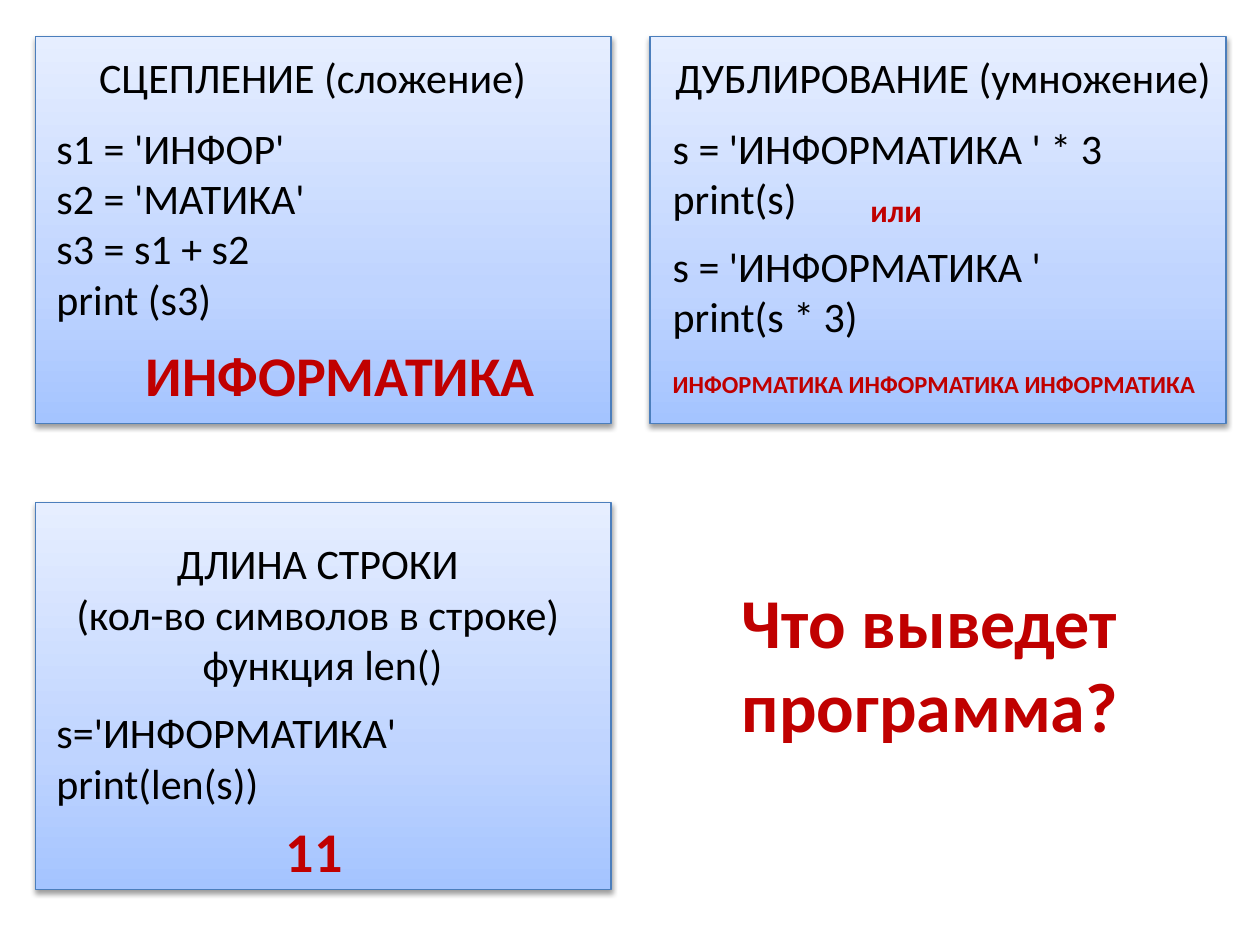
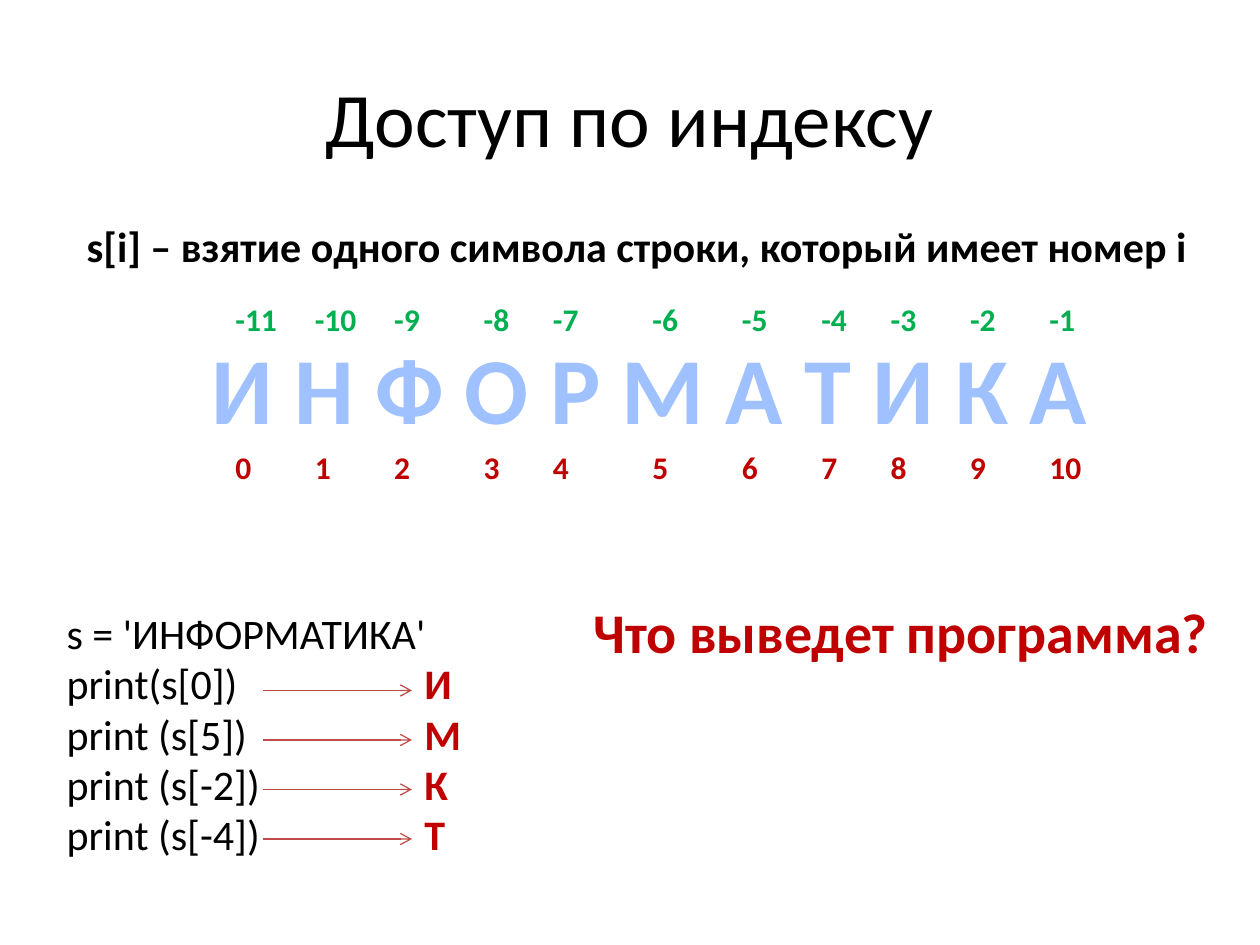
import pptx
import pptx.util
import pptx.dml.color
import pptx.enum.shapes
import pptx.enum.text
import pptx.oxml
import pptx.oxml.ns
from dataclasses import dataclass

# ---- Content: string operations ----
# Each part: role, text, (left, top) inside the card, (width, height)
CARDS = [
    {"at": (0.28, 0.29), "grouped": False, "parts": [
        ("heading", "СЦЕПЛЕНИЕ (сложение)", (0.39, 0.07), (3.62, 0.5)),
        ("code", "s1 = 'ИНФОР'\ns2 = 'МАТИКА'\ns3 = s1 + s2\nprint (s3)",
         (0.07, 0.63), (5, 1.72)),
        ("output", "ИНФОРМАТИКА", (0.78, 2.36), (3.32, 0.64)),
    ]},
    {"at": (5.16, 0.29), "grouped": True, "parts": [
        ("heading", "ДУБЛИРОВАНИЕ (умножение)", (0.08, 0.07), (4.49, 0.5)),
        ("code", "s = 'ИНФОРМАТИКА ' * 3\nprint(s)", (0.08, 0.63), (5, 0.91)),
        ("code", "s = 'ИНФОРМАТИКА '\nprint(s * 3)", (0.08, 1.57), (5, 0.91)),
        ("aside", "или", (1.65, 1.18), (0.62, 0.4)),
        ("long_output", "ИНФОРМАТИКА ИНФОРМАТИКА ИНФОРМАТИКА",
         (0.08, 2.59), (4.41, 0.34)),
    ]},
    {"at": (0.28, 3.99), "grouped": False, "parts": [
        ("heading", "ДЛИНА СТРОКИ \n(кол-во символов в строке) \nфункция len()",
         (0.21, 0.23), (4.14, 1.31)),
        ("code", "s='ИНФОРМАТИКА'\nprint(len(s))", (0.07, 1.57), (5, 0.91)),
        ("output", "11", (1.89, 2.44), (0.66, 0.64)),
    ]},
]
CARD_SIZE = (4.57, 3.07)
QUESTION = ("Что выведет", "программа?")

# ---- Content: access by index ----
INDEX_TITLE = "Доступ по индексу"
INDEX_RULE = "s[i] – взятие одного символа строки, который имеет номер i"
WORD = "ИНФОРМАТИКА"
LETTER_LEFTS = [1.77, 2.4, 3.03, 3.74, 4.29, 5.08, 5.79, 6.42, 6.97, 7.6, 8.23]
PRINTS = [("print(s[0])", 0), ("print (s[5])", 5),
          ("print (s[-2])", -2), ("print (s[-4])", -4)]
FIRST_ARROW_TOP, ARROW_STEP = 5.48, 0.393


@dataclass(frozen=True)
class Theme:
    font: str = "Calibri"
    ink: str = "000000"
    answer: str = "C00000"
    negative: str = "00B050"
    letters: str = "A0C1FF"
    card_line: str = "4B7EBC"
    arrow: str = "BF4C48"
    card_stops: tuple = ((0, "A4C4FF"), (35, "BFD4FF"), (100, "E6EEFF"))
    title: int = 44
    word: int = 54
    question: int = 40
    output: int = 32
    body: int = 24
    index: int = 18
    small: int = 14
    hairline: float = 0.75


THEME = Theme()
CENTER = pptx.enum.text.PP_ALIGN.CENTER
ROLES = {
    "heading": dict(wrap=False, align=CENTER),
    "code": dict(),
    "output": dict(size=THEME.output, color=THEME.answer, bold=True, wrap=False),
    "aside": dict(size=THEME.index, color=THEME.answer, bold=True, wrap=False),
    "long_output": dict(size=THEME.small, color=THEME.answer, bold=True),
}
Inches = pptx.util.Inches


def rgb(value):
    return pptx.dml.color.RGBColor.from_string(value)


def drawing_xml(body):
    """Parse one DrawingML element, given without its namespace declaration."""
    tag, rest = body.split(">", 1)
    return pptx.oxml.parse_xml(f"{tag} {pptx.oxml.ns.nsdecls('a')}>{rest}")


def format_text(frame, text, size=THEME.body, color=THEME.ink, bold=False, align=None):
    frame.text = text
    for paragraph in frame.paragraphs:
        paragraph.alignment = align
        for run in paragraph.runs:
            run.font.name = THEME.font
            run.font.size = pptx.util.Pt(size)
            run.font.bold = bold
            run.font.color.rgb = rgb(color)


def add_text(shapes, text, at, size_in, wrap=True, **style):
    frame = shapes.add_textbox(*map(Inches, (*at, *size_in))).text_frame
    frame.word_wrap = wrap
    frame.auto_size = pptx.enum.text.MSO_AUTO_SIZE.SHAPE_TO_FIT_TEXT
    format_text(frame, text, **style)


def add_card(shapes, at):
    card = shapes.add_shape(pptx.enum.shapes.MSO_SHAPE.RECTANGLE,
                            *map(Inches, (*at, *CARD_SIZE)))
    card.line.color.rgb = rgb(THEME.card_line)
    card.line.width = pptx.util.Pt(THEME.hairline)
    card.shadow.inherit = False
    # Three-stop gradient and soft shadow
    stops = "".join(f'<a:gs pos="{place * 1000}"><a:srgbClr val="{color}"/></a:gs>'
                    for place, color in THEME.card_stops)
    properties = card._element.spPr
    properties.find(pptx.oxml.ns.qn("a:prstGeom")).addnext(drawing_xml(
        f'<a:gradFill rotWithShape="1"><a:gsLst>{stops}</a:gsLst>'
        '<a:lin ang="16200000" scaled="0"/></a:gradFill>'))
    properties.find(pptx.oxml.ns.qn("a:effectLst")).append(drawing_xml(
        '<a:outerShdw blurRad="40000" dist="20000" dir="5400000" rotWithShape="0">'
        '<a:srgbClr val="000000"><a:alpha val="38000"/></a:srgbClr></a:outerShdw>'))


def add_arrow(shapes, left, right, top):
    arrow = shapes.add_connector(pptx.enum.shapes.MSO_CONNECTOR.STRAIGHT,
                                 *map(Inches, (left, top, right, top)))
    arrow.line.color.rgb = rgb(THEME.arrow)
    arrow.line.width = pptx.util.Pt(THEME.hairline)
    arrow.line._get_or_add_ln().append(drawing_xml('<a:tailEnd type="arrow"></a:tailEnd>'))
    arrow._element.spPr.append(drawing_xml("<a:effectLst></a:effectLst>"))


def add_index(shapes, number, left, top, color):
    width = 0.2 + 0.13 * len(str(abs(number))) + (0.08 if number < 0 else 0)
    add_text(shapes, str(number), (left, top), (width, 0.4), wrap=False,
             size=THEME.index, color=color, bold=True)


def build_operations(deck):
    shapes = deck.slides.add_slide(deck.slide_layouts[6]).shapes
    for card in CARDS:
        target = shapes.add_group_shape().shapes if card["grouped"] else shapes
        left, top = card["at"]
        add_card(target, card["at"])
        for role, text, (dx, dy), size_in in card["parts"]:
            add_text(target, text, (left + dx, top + dy), size_in, **ROLES[role])
    add_text(shapes, "\n".join(QUESTION), (5.79, 4.54), (3.34, 1.45), wrap=False,
             size=THEME.question, color=THEME.answer, bold=True)


def build_index_access(deck):
    shapes = deck.slides.add_slide(deck.slide_layouts[5]).shapes
    title = shapes.title
    title.left, title.top, title.width, title.height = map(Inches, (0.5, 0.3, 9, 1.25))
    title.text_frame.vertical_anchor = pptx.enum.text.MSO_ANCHOR.MIDDLE
    format_text(title.text_frame, INDEX_TITLE, size=THEME.title, align=CENTER)
    add_text(shapes, INDEX_RULE, (0.59, 1.7), (9, 0.5), wrap=False, bold=True)

    # Word with its indexes counted from both ends
    add_text(shapes, " ".join(WORD), (1.54, 2.57), (7.23, 1.01), wrap=False,
             size=THEME.word, color=THEME.letters, bold=True, align=CENTER)
    for number, left in enumerate(LETTER_LEFTS):
        add_index(shapes, number, left, 3.51, THEME.answer)
        add_index(shapes, number - len(WORD), left, 2.33, THEME.negative)

    # Program, its output and the arrows between them
    code = [f"s = '{WORD}'"] + [line for line, _ in PRINTS]
    add_text(shapes, "\n".join(code), (0.43, 4.77), (5, 2.12))
    add_text(shapes, " ".join(QUESTION), (4.61, 4.69), (5.13, 0.64), **ROLES["output"])
    add_text(shapes, "\n".join(WORD[number] for _, number in PRINTS),
             (3.27, 5.17), (0.79, 1.72), color=THEME.answer, bold=True)
    for row in range(len(PRINTS)):
        add_arrow(shapes, 2.09, 3.27, FIRST_ARROW_TOP + row * ARROW_STEP)


def main():
    deck = pptx.Presentation()
    deck.slide_width, deck.slide_height = Inches(10), Inches(7.5)
    build_operations(deck)
    build_index_access(deck)
    deck.save("out.pptx")


if __name__ == "__main__":
    main()
